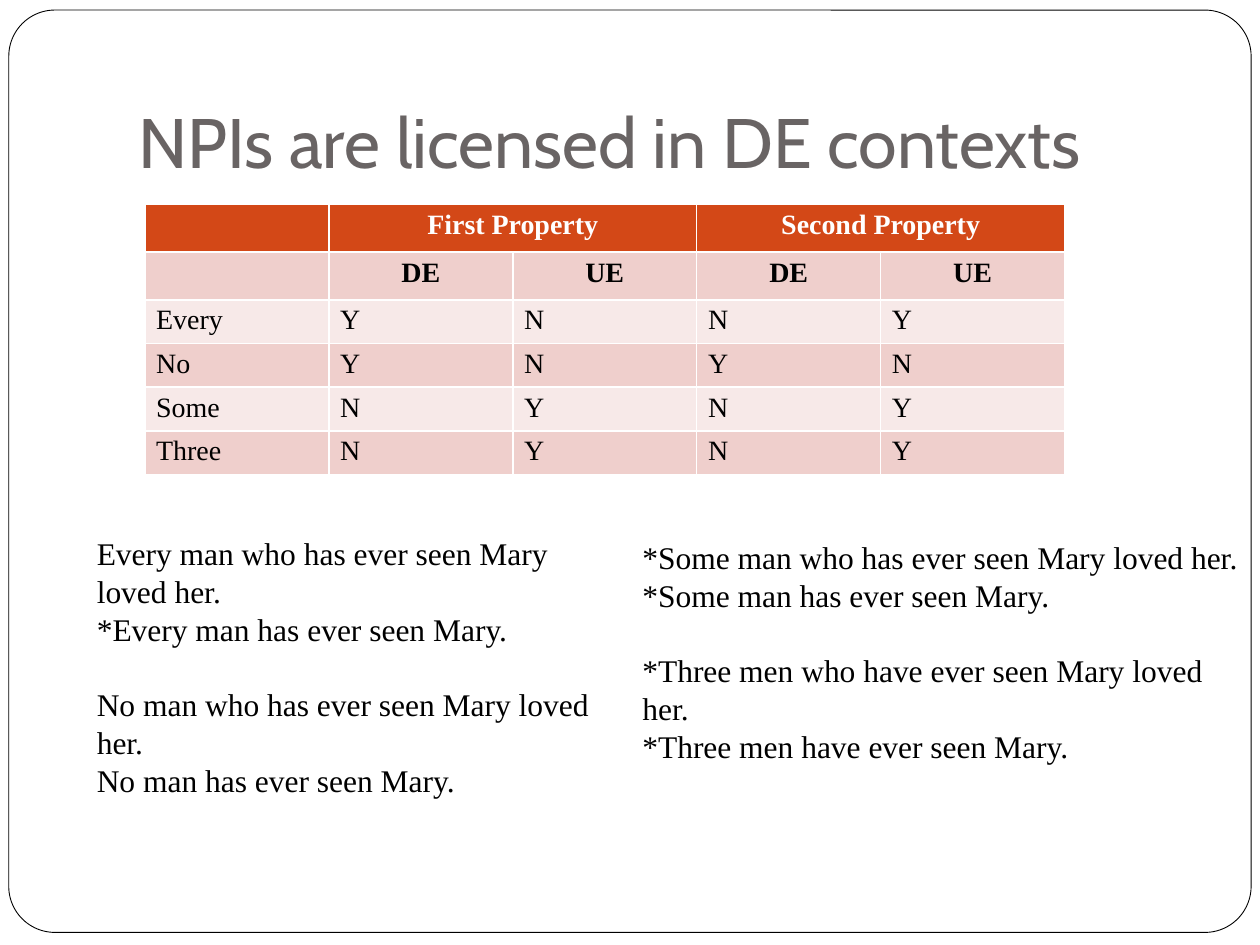
from pptx import Presentation
from pptx.dml.color import RGBColor
from pptx.enum.shapes import MSO_SHAPE
from pptx.enum.text import MSO_ANCHOR, PP_ALIGN
from pptx.util import Inches, Pt

BLACK = RGBColor(0x00, 0x00, 0x00)
WHITE = RGBColor(0xFF, 0xFF, 0xFF)
GRAY = RGBColor(0x69, 0x64, 0x64)
ORANGE = RGBColor(0xD3, 0x48, 0x17)
ROSE = RGBColor(0xEF, 0xCF, 0xCC)
PALE_ROSE = RGBColor(0xF7, 0xE9, 0xE8)

BODY_FONT = "Times New Roman"
TITLE = "NPIs are licensed in DE contexts"
PROPERTIES = [
    ["", "First Property", "", "Second Property", ""],
    ["", "DE", "UE", "DE", "UE"],
    ["Every", "Y", "N", "N", "Y"],
    ["No", "Y", "N", "Y", "N"],
    ["Some", "N", "Y", "N", "Y"],
    ["Three", "N", "Y", "N", "Y"],
]
HEADING_ROWS = 2
MERGED_STARTS = (1, 3)
EXAMPLES = [
    ((0.67, 4.19, 4.33, 1.92), [
        "Every man who has ever seen Mary loved her.",
        "*Every man has ever seen Mary.",
        "No man who has ever seen Mary loved her.",
        "No man has ever seen Mary.",
    ]),
    ((5, 4.22, 5, 1.62), [
        "*Some man who has ever seen Mary loved her.",
        "*Some man has ever seen Mary.",
        "*Three men who have ever seen Mary loved her.",
        "*Three men have ever seen Mary.",
    ]),
]
SECOND_PAIR = 2
PAIR_GAP = Pt(21.6)
COLUMN_WIDTH, ROW_HEIGHT = Inches(1.46), Inches(0.345)


def add_span(paragraph, text, font, size, color, bold=False):
    span = paragraph.add_run()
    span.text = text
    span.font.name = font
    span.font.size = Pt(size)
    span.font.color.rgb = color
    span.font.bold = bold


def add_box(page, area):
    box = page.shapes.add_textbox(*map(Inches, area))
    box.text_frame.word_wrap = True
    return box.text_frame


def add_frame(page):
    frame = page.shapes.add_shape(
        MSO_SHAPE.ROUNDED_RECTANGLE, *map(Inches, (0.07, 0.08, 9.86, 7.32)))
    frame.adjustments[0] = 0.05
    frame.shadow.inherit = False
    frame.fill.solid()
    frame.fill.fore_color.rgb = WHITE
    frame.line.color.rgb = BLACK
    frame.line.width = Pt(0.5)


def add_title(page):
    frame = add_box(page, (1, 0.3, 8.5, 1.25))
    frame.vertical_anchor = MSO_ANCHOR.BOTTOM
    frame.margin_bottom = Inches(0.1)
    add_span(frame.paragraphs[0], TITLE, "Cabin", 40, GRAY)


def add_property_table(page):
    row_count, column_count = len(PROPERTIES), len(PROPERTIES[0])
    table = page.shapes.add_table(
        row_count, column_count, Inches(1.15), Inches(1.62),
        COLUMN_WIDTH * column_count, ROW_HEIGHT * row_count).table
    for row, values in enumerate(PROPERTIES):
        for column, value in enumerate(values):
            cell = table.cell(row, column)
            cell.margin_left = cell.margin_right = Inches(0.09)
            cell.margin_top = cell.margin_bottom = Inches(0.04)
            cell.fill.solid()
            band = PALE_ROSE if row % 2 == 0 else ROSE
            cell.fill.fore_color.rgb = ORANGE if row == 0 else band
            heading = row < HEADING_ROWS
            paragraph = cell.text_frame.paragraphs[0]
            paragraph.alignment = PP_ALIGN.CENTER if heading else PP_ALIGN.LEFT
            add_span(paragraph, value, BODY_FONT, 16,
                     WHITE if row == 0 else BLACK, heading)
    for start in MERGED_STARTS:
        table.cell(0, start).merge(table.cell(0, start + 1))


def add_examples(page, area, sentences):
    frame = add_box(page, area)
    for index, sentence in enumerate(sentences):
        paragraph = frame.paragraphs[0] if index == 0 else frame.add_paragraph()
        if index == SECOND_PAIR:
            paragraph.space_before = PAIR_GAP
        add_span(paragraph, sentence, BODY_FONT, 18, BLACK)


def main():
    deck = Presentation()
    deck.slide_width, deck.slide_height = Inches(10), Inches(7.5)
    page = deck.slides.add_slide(deck.slide_layouts[6])
    add_frame(page)
    add_title(page)
    add_property_table(page)
    for area, sentences in EXAMPLES:
        add_examples(page, area, sentences)
    deck.save("out.pptx")


if __name__ == "__main__":
    main()
